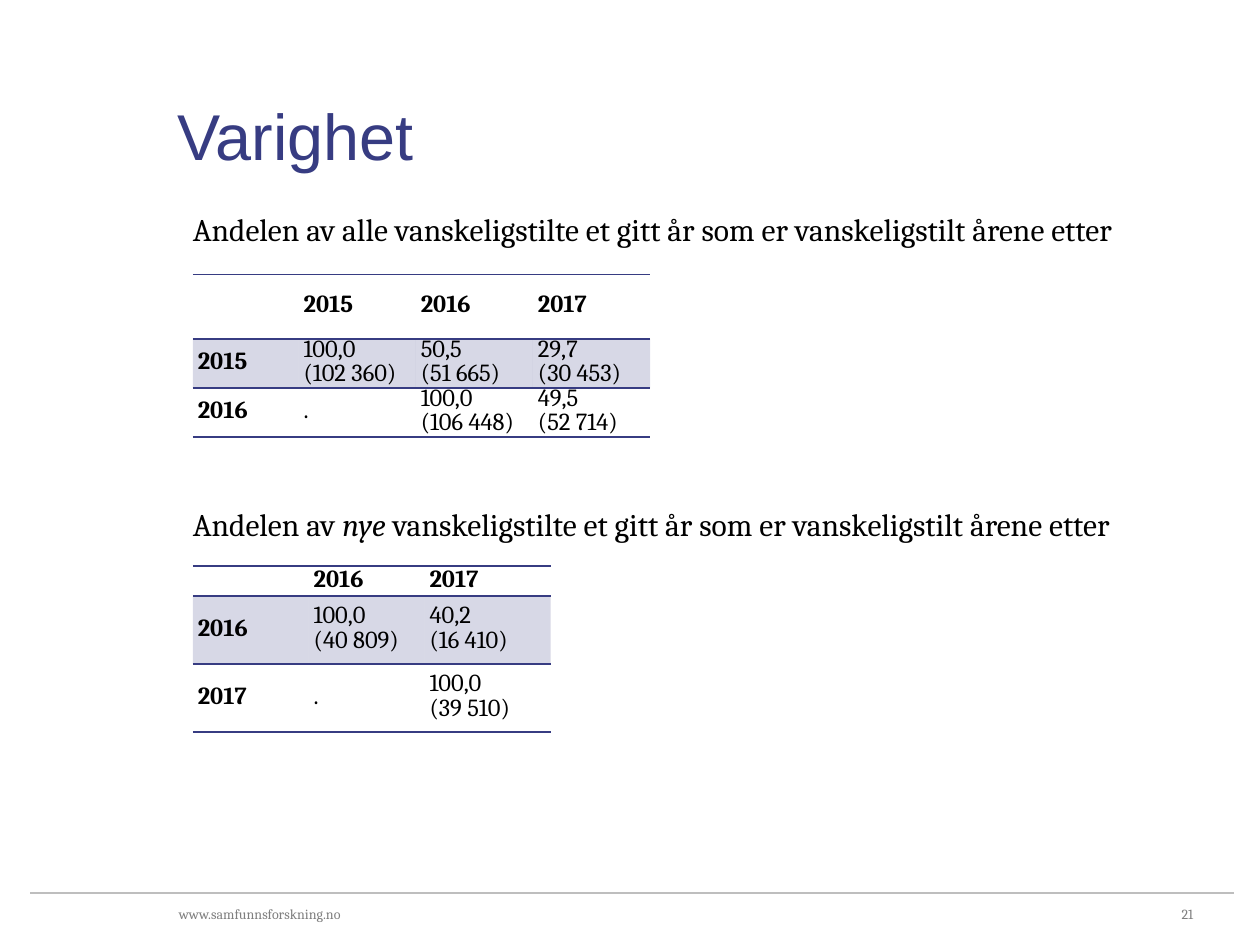
from lxml import etree
from pptx import Presentation
from pptx import util as u
from pptx.dml.color import RGBColor
from pptx.enum import shapes, text
from pptx.oxml import ns

THEME = {
    "title": ("Arial", 37, "373C82"),
    "heading": ("Cambria", 18, "000000"),
    "cell": ("Cambria", 14, "000000"),
    "footer": ("Cambria", 8, "7F7F7F"),
    "accent": "373C82",
    "footer_rule": "BEBEBE",
}
NO_STYLE = "{2D5ABB26-0587-4C30-8999-92F81FD0307C}"
LEFT = 1.53

LABELS = [
    ("title", (1.41, 0.75, 8.07, 0.63), text.MSO_ANCHOR.BOTTOM, text.PP_ALIGN.LEFT, ["Varighet"]),
    ("footer", (1.42, 7.19, 2.36, 0.13), text.MSO_ANCHOR.MIDDLE, text.PP_ALIGN.LEFT,
     ["www.samfunnsforskning.no"]),
    ("footer", (8.65, 7.19, 0.82, 0.13), text.MSO_ANCHOR.MIDDLE, text.PP_ALIGN.RIGHT, ["21"]),
]

SECTIONS = [
    {
        "heading": ["Andelen av alle vanskeligstilte et gitt år som er vanskeligstilt årene etter"],
        "heading_top": 1.67,
        "table_top": 2.18,
        "widths": [0.84, 0.93, 0.93, 0.93],
        "heights": [0.51, 0.39, 0.39],
        "rows": [
            ["", "2015", "2016", "2017"],
            ["2015", "100,0\n(102 360)", "50,5\n(51 665)", "29,7\n(30 453)"],
            ["2016", ".", "100,0\n(106 448)", "49,5\n(52 714)"],
        ],
    },
    {
        "heading": ["Andelen av ", "nye", " vanskeligstilte et gitt år som er vanskeligstilt årene etter"],
        "heading_top": 4.01,
        "table_top": 4.49,
        "widths": [0.92, 0.92, 1],
        "heights": [0.24, 0.54, 0.54],
        "rows": [
            ["", "2016", "2017"],
            ["2016", "100,0\n(40 809)", "40,2\n(16 410)"],
            ["2017", ".", "100,0\n(39 510)"],
        ],
    },
]


def style_font(font, role):
    name, size, color = THEME[role]
    font.name, font.size = name, u.Pt(size)
    font.color.rgb = RGBColor.from_string(color)


def add_label(slide, role, place, anchor, align, parts):
    frame = slide.shapes.add_textbox(*map(u.Inches, place)).text_frame
    frame.word_wrap = True
    frame.vertical_anchor = anchor
    frame.margin_left = frame.margin_right = frame.margin_top = frame.margin_bottom = 0
    paragraph = frame.paragraphs[0]
    paragraph.alignment = align
    style_font(paragraph.font, role)
    for index, part in enumerate(parts):
        run = paragraph.add_run()
        run.text = part
        if index == 1:
            run.font.italic = True


def add_borders(cell, sides):
    properties = cell._tc.get_or_add_tcPr()
    for index, side in enumerate(sides):
        line = etree.Element(ns.qn(f"a:ln{side}"), w=str(u.Pt(1)))
        fill = etree.SubElement(line, ns.qn("a:solidFill"))
        etree.SubElement(fill, ns.qn("a:srgbClr"), val=THEME["accent"])
        properties.insert(index, line)


def fill_cell(cell, content, bold, shaded):
    cell.vertical_anchor = text.MSO_ANCHOR.MIDDLE
    cell.margin_left = cell.margin_right = u.Inches(0.04)
    cell.margin_top = cell.margin_bottom = 0
    cell.text_frame.text = content
    for paragraph in cell.text_frame.paragraphs:
        paragraph.alignment = text.PP_ALIGN.JUSTIFY
        paragraph.line_spacing = u.Pt(14)
        style_font(paragraph.font, "cell")
        paragraph.font.bold = bold
    if shaded:
        cell.fill.solid()
        cell.fill.fore_color.rgb = RGBColor.from_string(THEME["accent"])
        color = cell._tc.tcPr.find(".//" + ns.qn("a:srgbClr"))
        etree.SubElement(color, ns.qn("a:alpha"), val="20000")
    else:
        cell.fill.background()


def add_share_table(slide, section):
    rows, widths, heights = section["rows"], section["widths"], section["heights"]
    place = (LEFT, section["table_top"], sum(widths), sum(heights))
    table = slide.shapes.add_table(len(rows), len(widths), *map(u.Inches, place)).table
    table.first_row = table.horz_banding = False
    table._tbl.tblPr.find(ns.qn("a:tableStyleId")).text = NO_STYLE
    for column, width in zip(table.columns, widths):
        column.width = u.Inches(width)
    borders = {0: "TB", 1: "T", len(rows) - 1: "B"}
    for r, contents in enumerate(rows):
        table.rows[r].height = u.Inches(heights[r])
        for c, content in enumerate(contents):
            cell = table.cell(r, c)
            fill_cell(cell, content, bold=r == 0 or c == 0, shaded=r == 1)
            add_borders(cell, borders[r])


def add_footer_rule(slide):
    ends = map(u.Inches, (0.24, 7.09, 9.79, 7.09))
    rule = slide.shapes.add_connector(shapes.MSO_CONNECTOR.STRAIGHT, *ends)
    rule.line.color.rgb = RGBColor.from_string(THEME["footer_rule"])
    rule.line.width = u.Pt(1)
    etree.SubElement(rule._element.spPr, ns.qn("a:effectLst"))


def main():
    deck = Presentation()
    deck.slide_width, deck.slide_height = u.Inches(10), u.Inches(7.5)
    slide = deck.slides.add_slide(deck.slide_layouts[6])
    add_footer_rule(slide)
    for label in LABELS:
        add_label(slide, *label)
    for section in SECTIONS:
        add_share_table(slide, section)
        add_label(slide, "heading", (LEFT, section["heading_top"], 7.72, 0.3),
                  text.MSO_ANCHOR.TOP, text.PP_ALIGN.LEFT, section["heading"])
    deck.save("out.pptx")


if __name__ == "__main__":
    main()
